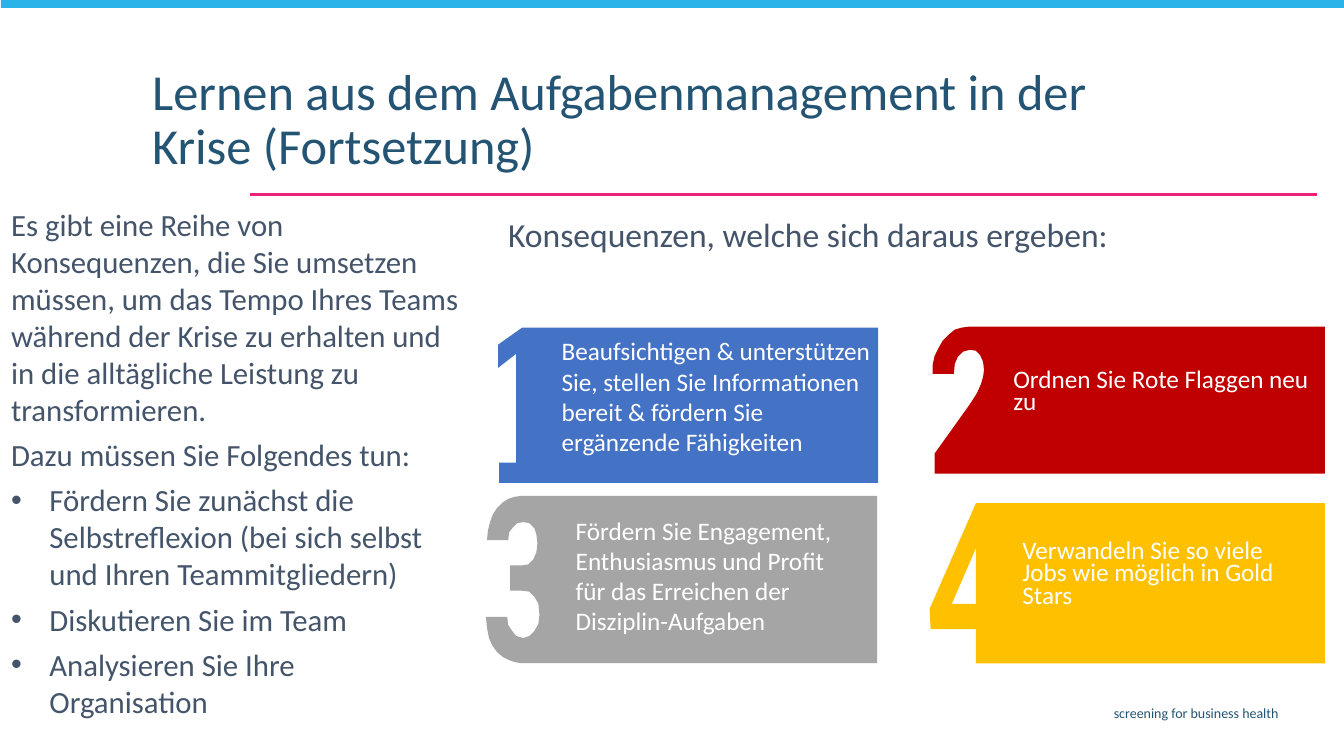
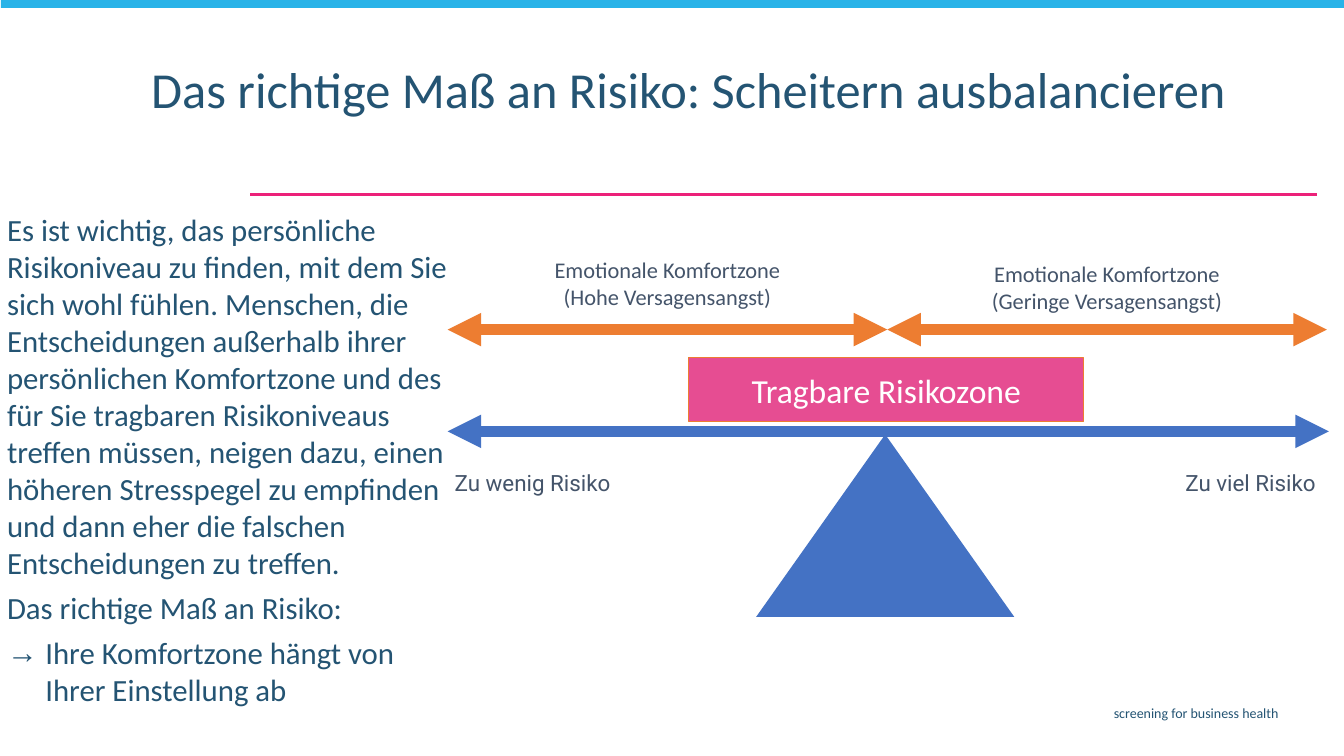
import pptx
import pptx.dml.color
import pptx.enum.shapes
import pptx.enum.text
import pptx.oxml
import pptx.oxml.ns
import pptx.util
from pptx.util import Inches

NAVY = "245473"
SLATE = "44546A"
WHITE = "FFFFFF"
SKY = "29B3E8"
MAGENTA = "EC2179"
PINK = "E64D92"
BLUE = "4472C4"
ORANGE = "ED7D31"
RED = "C00000"
GREY = "A5A5A5"
GOLD = "FFC000"

ALIGN = pptx.enum.text.PP_ALIGN
ANCHOR = pptx.enum.text.MSO_ANCHOR
SHAPE = pptx.enum.shapes.MSO_SHAPE

# Outlines of the numbered cards, in inches
ONE = [[(5.18, 3.25), (4.94, 3.42), (4.94, 3.65), (5.12, 3.51), (5.12, 4.59),
        (4.95, 4.59), (4.95, 4.79), (8.71, 4.79), (8.71, 3.25)]]
TWO = [[(9.62, 3.24), (9.54, 3.25), (9.47, 3.27), (9.41, 3.32), (9.35, 3.38),
        (9.31, 3.45), (9.27, 3.53), (9.25, 3.62), (9.25, 3.71), (9.46, 3.71),
        (9.47, 3.61), (9.5, 3.54), (9.55, 3.49), (9.62, 3.47), (9.68, 3.48),
        (9.72, 3.52), (9.75, 3.59), (9.76, 3.67), (9.75, 3.74), (9.73, 3.81),
        (9.69, 3.9), (9.62, 4.01), (9.27, 4.5), (9.27, 4.7), (13.14, 4.7),
        (13.14, 3.24)]]
THREE = [[(5.17, 4.92), (5.1, 4.93), (5.04, 4.95), (4.98, 4.99), (4.93, 5.04),
          (4.89, 5.1), (4.86, 5.18), (4.84, 5.26), (4.83, 5.36), (5.04, 5.36),
          (5.05, 5.28), (5.09, 5.23), (5.13, 5.19), (5.19, 5.18), (5.25, 5.19),
          (5.3, 5.24), (5.32, 5.3), (5.33, 5.39), (5.32, 5.48), (5.29, 5.55),
          (5.24, 5.6), (5.17, 5.61), (5.06, 5.61), (5.06, 5.86), (5.17, 5.86),
          (5.25, 5.87), (5.3, 5.92), (5.34, 5.99), (5.35, 6.1), (5.34, 6.19),
          (5.3, 6.26), (5.25, 6.31), (5.19, 6.33), (5.12, 6.31), (5.08, 6.26),
          (5.04, 6.2), (5.03, 6.12), (4.82, 6.12), (4.83, 6.23), (4.85, 6.33),
          (4.88, 6.4), (4.93, 6.47), (4.99, 6.52), (5.05, 6.55), (5.11, 6.57),
          (5.17, 6.58), (8.7, 6.58), (8.7, 4.92)]]
FOUR = [[(9.9, 4.99), (9.68, 4.99), (9.22, 6.04), (9.23, 6.24), (9.68, 6.24),
         (9.68, 6.58), (13.14, 6.58), (13.14, 4.99)],
        [(9.68, 5.99), (9.44, 5.99), (9.67, 5.46), (9.68, 5.42)]]


def color(value):
    return pptx.dml.color.RGBColor.from_string(value)


def add_xml(parent, tag, **attributes):
    element = pptx.oxml.parse_xml(f"<a:{tag} {pptx.oxml.ns.nsdecls('a')}/>")
    for name, value in attributes.items():
        element.set(name, value)
    parent.append(element)


def place(shape, left, top, width, height):
    shape.left, shape.top = Inches(left), Inches(top)
    shape.width, shape.height = Inches(width), Inches(height)


def prepare_frame(shape, margin=0.05, anchor=ANCHOR.TOP):
    frame = shape.text_frame
    frame.word_wrap = True
    frame.auto_size = pptx.enum.text.MSO_AUTO_SIZE.NONE
    frame.vertical_anchor = anchor
    frame.margin_left = frame.margin_right = Inches(margin)
    frame.margin_top = frame.margin_bottom = Inches(margin)
    return frame


def write(paragraph, text, size, fill, align=ALIGN.LEFT, spacing=None, font="Calibri"):
    paragraph.text = text
    paragraph.alignment = align
    if spacing:
        paragraph.line_spacing = spacing
    for run in paragraph.runs:
        run.font.name = font
        run.font.size = pptx.util.Pt(size)
        run.font.color.rgb = color(fill)


def add_text(slide, box, text, size, fill, **style):
    shape = slide.shapes.add_textbox(*map(Inches, box))
    write(prepare_frame(shape).paragraphs[0], text, size, fill, **style)
    return shape


def paint(shape, fill, outline=None):
    shape.shadow.inherit = False
    shape.fill.solid()
    shape.fill.fore_color.rgb = color(fill)
    if outline:
        shape.line.color.rgb = color(outline)
        shape.line.width = pptx.util.Pt(0.5)
    else:
        shape.line.fill.background()


def add_block(slide, kind, box, fill, outline=None):
    shape = slide.shapes.add_shape(kind, *map(Inches, box))
    paint(shape, fill, outline)
    return shape


def add_line(slide, left, right, y, fill, width, arrows=False):
    """Draw a horizontal line, optionally with an arrowhead at each end."""
    line = slide.shapes.add_connector(
        pptx.enum.shapes.MSO_CONNECTOR.STRAIGHT,
        Inches(left), Inches(y), Inches(right), Inches(y))
    line.line.color.rgb = color(fill)
    line.line.width = pptx.util.Pt(width)
    properties = line.element.spPr
    if arrows:
        for end in ("headEnd", "tailEnd"):
            add_xml(properties.find(pptx.oxml.ns.qn("a:ln")), end, type="triangle")
    add_xml(properties, "effectLst")
    return line


def add_outline(slide, contours, fill):
    contours = [[(Inches(x), Inches(y)) for x, y in points] for points in contours]
    builder = slide.shapes.build_freeform(*contours[0][0])
    for index, points in enumerate(contours):
        if index:
            builder.move_to(*points[0])
        builder.add_line_segments(points[1:], close=True)
    paint(builder.convert_to_shape(), fill)


def fill_title(slide, text, box, spacing):
    title = slide.shapes.title
    place(title, *box)
    write(prepare_frame(title).paragraphs[0], text, 36, NAVY, spacing=spacing)


def fill_body(slide, box, fill, items):
    """Fill the body placeholder with (bullet, text) items; bullet may be None."""
    body = slide.placeholders[1]
    place(body, *box)
    frame = prepare_frame(body, 0.04)
    for index, (bullet, text) in enumerate(items):
        paragraph = frame.add_paragraph() if index else frame.paragraphs[0]
        properties = paragraph._p.get_or_add_pPr()
        indent = Inches(0.38) if bullet else 0
        properties.set("marL", str(indent))
        properties.set("indent", str(-indent))
        if bullet:
            add_xml(properties, "buFont", typeface="Arial")
            add_xml(properties, "buChar", char=bullet)
        else:
            add_xml(properties, "buNone")
        paragraph.space_before = pptx.util.Pt(6 if index else 0)
        write(paragraph, text, 22, fill)


def decorate_layout(layout, slide):
    """Draw band, rule and footer on the slide, then move them to its layout."""
    for placeholder in list(layout.placeholders):
        if placeholder.placeholder_format.idx >= 10:
            layout.shapes.element.remove(placeholder.element)
    decorations = [
        add_line(slide, 2.48, 13.06, 1.93, MAGENTA, 1.5),
        add_block(slide, SHAPE.RECTANGLE, (0.01, -0.02, 13.34, 0.1), SKY),
        add_text(slide, (3.7, 6.94, 9.03, 0.25), "screening for business health",
                 10, NAVY, align=ALIGN.RIGHT),
    ]
    for shape in decorations:
        layout.shapes.element.append(shape.element)


def build_consequences(slide):
    fill_title(slide, "Lernen aus dem Aufgabenmanagement in der Krise (Fortsetzung)",
               (1.46, 0.61, 9.68, 1.2), 0.9)
    fill_body(slide, (0.07, 2, 4.53, 5.2), SLATE, [
        (None, "Es gibt eine Reihe von Konsequenzen, die Sie umsetzen müssen, um das "
               "Tempo Ihres Teams während der Krise zu erhalten und in die alltägliche "
               "Leistung zu transformieren."),
        (None, "Dazu müssen Sie Folgendes tun:"),
        ("•", "Fördern Sie zunächst die Selbstreflexion (bei sich selbst und Ihren "
              "Teammitgliedern)"),
        ("•", "Diskutieren Sie im Team"),
        ("•", "Analysieren Sie Ihre Organisation"),
    ])
    add_text(slide, (4.99, 2.07, 6.5, 0.5),
             "Konsequenzen, welche sich daraus ergeben:", 24, SLATE)
    tight = pptx.util.Pt(16)
    cards = [
        (ONE, BLUE, (5.52, 3.28, 3.33, 1.31), None,
         "Beaufsichtigen & unterstützen Sie, stellen Sie Informationen bereit & "
         "fördern Sie ergänzende Fähigkeiten"),
        (TWO, RED, (10, 3.63, 3.05, 0.58), tight, "Ordnen Sie Rote Flaggen neu zu"),
        (THREE, GREY, (5.66, 5.06, 2.89, 1.31), None,
         "Fördern Sie Engagement, Enthusiasmus und Profit für das Erreichen der "
         "Disziplin-Aufgaben"),
        (FOUR, GOLD, (10.09, 5.33, 2.94, 0.78), tight,
         "Verwandeln Sie so viele Jobs wie möglich in Gold Stars"),
    ]
    for contours, fill, box, spacing, text in cards:
        add_outline(slide, contours, fill)
        add_text(slide, box, text, 18, WHITE, spacing=spacing)


def build_risk_balance(slide):
    fill_title(slide, "Das richtige Maß an Risiko: Scheitern ausbalancieren",
               (1.45, 0.64, 11.34, 0.94), 0.81)
    fill_body(slide, (0.03, 2.05, 4.47, 5.16), NAVY, [
        (None, "Es ist wichtig, das persönliche Risikoniveau zu finden, mit dem Sie sich "
               "wohl fühlen. Menschen, die Entscheidungen außerhalb ihrer persönlichen "
               "Komfortzone und des für Sie tragbaren Risikoniveaus treffen müssen, neigen "
               "dazu, einen höheren Stresspegel zu empfinden und dann eher die falschen "
               "Entscheidungen zu treffen."),
        (None, "Das richtige Maß an Risiko:"),
        ("→", "Ihre Komfortzone hängt von Ihrer Einstellung ab"),
    ])
    zones = [(4.44, 2.49, "Hohe"), (8.8, 2.53, "Geringe")]
    zone_width, caption_width = 4.36, 2.8
    for left, top, degree in zones:
        add_line(slide, left, left + zone_width, 3.27, ORANGE, 8, arrows=True)
        add_text(slide, (left + (zone_width - caption_width) / 2, top, caption_width, 0.61),
                 f"Emotionale Komfortzone\n({degree} Versagensangst)", 16, SLATE,
                 align=ALIGN.CENTER)
    add_block(slide, SHAPE.ISOSCELES_TRIANGLE, (7.5, 4.31, 2.56, 1.81), BLUE)
    add_line(slide, 4.44, 13.18, 4.28, BLUE, 8, arrows=True)
    for left, text, align in [(4.46, "Zu wenig Risiko", ALIGN.LEFT),
                              (11.1, "Zu viel Risiko", ALIGN.RIGHT)]:
        add_text(slide, (left, 4.61, 2, 0.36), text, 16, SLATE, align=align, font="Roboto")
    zone = add_block(slide, SHAPE.RECTANGLE, (6.83, 3.55, 3.92, 0.63), PINK, ORANGE)
    write(prepare_frame(zone, anchor=ANCHOR.MIDDLE).paragraphs[0],
          "Tragbare Risikozone", 24, WHITE, align=ALIGN.CENTER)


def main():
    presentation = pptx.Presentation()
    presentation.slide_width = Inches(13.33)
    presentation.slide_height = Inches(7.5)
    layout = presentation.slide_layouts[1]
    slides = [presentation.slides.add_slide(layout) for _ in range(2)]
    decorate_layout(layout, slides[0])
    build_consequences(slides[0])
    build_risk_balance(slides[1])
    presentation.save("out.pptx")


if __name__ == "__main__":
    main()
